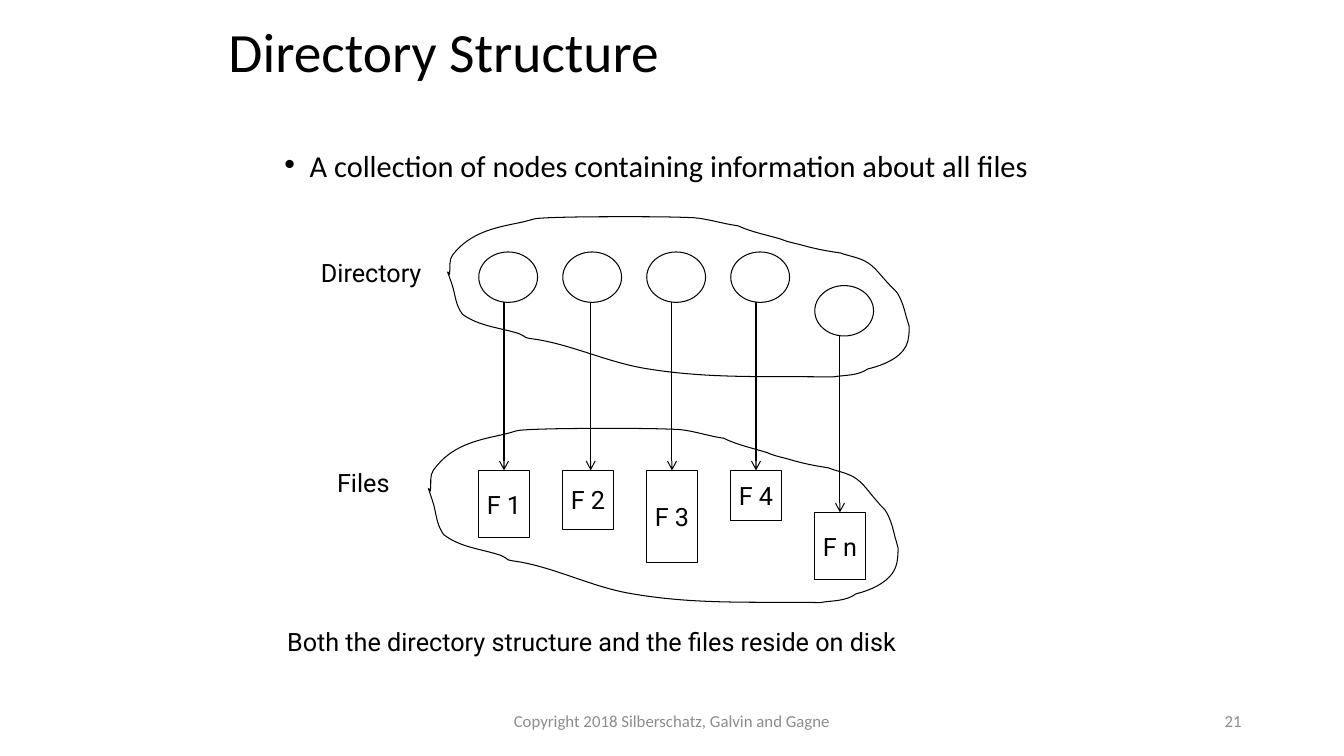
from lxml import etree
from pptx import Presentation
from pptx.dml.color import RGBColor
from pptx.enum.shapes import MSO_CONNECTOR, MSO_SHAPE
from pptx.enum.text import MSO_ANCHOR, MSO_AUTO_SIZE, PP_ALIGN
from pptx.oxml.ns import qn
from pptx.util import Inches, Pt

OVAL, RECTANGLE = MSO_SHAPE.OVAL, MSO_SHAPE.RECTANGLE
STRAIGHT = MSO_CONNECTOR.STRAIGHT
TOP, MIDDLE = MSO_ANCHOR.TOP, MSO_ANCHOR.MIDDLE
LEFT, CENTER, RIGHT = PP_ALIGN.LEFT, PP_ALIGN.CENTER, PP_ALIGN.RIGHT
NO_FIT = MSO_AUTO_SIZE.NONE

COLORS = {"ink": "000000", "paper": "FFFFFF", "footer": "8C8C8C"}
HEADING_FONT, LABEL_FONT = "Calibri", "Roboto"
COLUMNS, ROWS = 160, 90
CELL = Inches(1 / 12)
TOP_SIDE = 0

# Closed cloud outline in hundredths of an inch: a start point, then cubic curves.
CLOUD_WIDTH, CLOUD_HEIGHT = 458, 161
CLOUD_START = (2, 57)
CLOUD_CURVES = [
    (3, 50, 1, 43, 5, 38), (22, 16, 46, 11, 71, 6), (90, 2, 80, 2, 101, 1),
    (127, 0, 152, 0, 177, 0), (199, 0, 221, 0, 244, 1), (258, 2, 273, 7, 288, 9),
    (301, 15, 316, 18, 330, 22), (337, 25, 343, 26, 351, 28),
    (365, 32, 376, 34, 390, 36), (398, 39, 406, 40, 414, 44),
    (424, 49, 430, 59, 438, 67), (441, 71, 445, 73, 447, 77),
    (451, 84, 453, 91, 455, 99), (456, 102, 458, 109, 458, 109),
    (458, 113, 458, 122, 455, 128), (449, 141, 430, 148, 417, 151),
    (407, 158, 394, 157, 382, 159), (318, 158, 261, 161, 199, 151),
    (159, 145, 122, 126, 83, 121), (81, 121, 79, 120, 78, 120),
    (76, 119, 74, 117, 71, 116), (52, 110, 32, 109, 15, 97),
    (8, 88, 8, 79, 5, 69), (5, 69, 1, 57, 0, 55), (0, 54, 1, 56, 2, 57),
]

# Label, node row, file row, file height, arrow offset from the file's centre
FILES = [
    ("F 1", 30, 56, 8, 0),
    ("F 2", 30, 56, 7, 0.32),
    ("F 3", 30, 56, 11, 0),
    ("F 4", 30, 56, 6, 0),
    ("F n", 34, 61, 8, 0),
]
FIRST_COLUMN, COLUMN_STEP = 57, 10
NODE_WIDTH, NODE_HEIGHT, FILE_WIDTH = 7, 6, 6


def color(name):
    return RGBColor.from_string(COLORS[name])


def grid(*cells):
    return [round(cell * CELL) for cell in cells]


def bend(segment, curve):
    """Turn a straight path segment into a cubic curve."""
    segment.tag = qn("a:cubicBezTo")
    for point in list(segment):
        segment.remove(point)
    for x, y in zip(curve[::2], curve[1::2]):
        etree.SubElement(segment, qn("a:pt"), x=str(x), y=str(y))


def write(shape, text, font=LABEL_FONT, size=18, ink="ink", align=LEFT,
          anchor=TOP, wrap=True, spacing=None, bullet=None):
    frame = shape.text_frame
    frame.auto_size = NO_FIT
    frame.word_wrap = wrap
    frame.vertical_anchor = anchor
    para = frame.paragraphs[0]
    para.alignment = align
    para.space_before = Pt(0)
    if spacing:
        para.line_spacing = spacing
    if bullet:
        properties = para._p.get_or_add_pPr()
        properties.set("marL", str(Inches(0.25)))
        properties.set("indent", str(-Inches(0.25)))
        etree.SubElement(properties, qn("a:buChar")).set("char", bullet)
    span = para.add_run()
    span.text = text
    span.font.name = font
    span.font.size = Pt(size)
    span.font.color.rgb = color(ink)


class DiagramSlide:
    """Draws on one slide; places are columns and rows of 1/12 inch."""

    def __init__(self, deck, layout):
        self.page = deck.slides.add_slide(layout)
        self.shapes = self.page.shapes
        self.line_width = Pt(0.75)

    def outline(self, shape):
        shape.line.color.rgb = color("ink")
        shape.line.width = self.line_width

    def place(self, shape, cells):
        shape.left, shape.top, shape.width, shape.height = grid(*cells)

    def placeholder(self, index, cells, text, **style):
        box = self.page.placeholders[index]
        self.place(box, cells)
        write(box, text, font=HEADING_FONT, **style)

    def label(self, cells, text, **style):
        write(self.shapes.add_textbox(*grid(*cells)), text, **style)

    def shape(self, kind, cells):
        shape = self.shapes.add_shape(kind, *grid(*cells))
        shape.shadow.inherit = False
        shape.fill.solid()
        shape.fill.fore_color.rgb = color("paper")
        self.outline(shape)
        return shape

    def arrow(self, column, start_row, end_row, target=None):
        """Draw a downward arrow, joined to the target's top side if given."""
        arrow = self.shapes.add_connector(
            STRAIGHT, *grid(column, start_row, column, end_row))
        if target is not None:
            arrow.end_connect(target, TOP_SIDE)
        self.outline(arrow)
        head = etree.SubElement(arrow.line._get_or_add_ln(), qn("a:tailEnd"))
        head.set("type", "arrow")
        etree.SubElement(arrow._element.spPr, qn("a:effectLst"))

    def cloud(self, *cells):
        builder = self.shapes.build_freeform(*CLOUD_START)
        builder.add_line_segments([curve[4:] for curve in CLOUD_CURVES], close=True)
        cloud = builder.convert_to_shape()
        outline = next(cloud._element.iter(qn("a:path")))
        outline.set("w", str(CLOUD_WIDTH))
        outline.set("h", str(CLOUD_HEIGHT))
        for segment, curve in zip(outline.findall(qn("a:lnTo")), CLOUD_CURVES):
            bend(segment, curve)
        self.place(cloud, cells)
        cloud.shadow.inherit = False
        cloud.fill.background()
        self.outline(cloud)


def main():
    deck = Presentation()
    deck.slide_width, deck.slide_height = grid(COLUMNS, ROWS)
    slide = DiagramSlide(deck, deck.slide_layouts[1])

    slide.placeholder(0, (26, 2.75, 108, 7.5), "Directory Structure",
                      size=39.6, anchor=MIDDLE, spacing=0.9)
    slide.placeholder(1, (32.67, 18.08, 96.67, 4.67),
                      "A collection of nodes containing information about all files",
                      size=21.7, spacing=0.7, bullet="•")

    for index, (name, node_row, file_row, height, offset) in enumerate(FILES):
        column = FIRST_COLUMN + index * COLUMN_STEP
        slide.shape(OVAL, (column, node_row, NODE_WIDTH, NODE_HEIGHT))
        file_box = slide.shape(RECTANGLE, (column, file_row, FILE_WIDTH, height))
        write(file_box, name, align=CENTER, anchor=MIDDLE, wrap=False)
        slide.arrow(column + FILE_WIDTH / 2 + offset, node_row + NODE_HEIGHT,
                    file_row, None if offset else file_box)

    slide.cloud(53.28, 25.8, 54.96, 19.32)
    slide.cloud(51, 51, 55.92, 21)

    slide.label((37, 30, 14.4, 4.8), "Directory", align=CENTER, anchor=MIDDLE, wrap=False)
    slide.label((38.88, 55, 8.76, 4.8), "Files", align=CENTER, anchor=MIDDLE, wrap=False)
    slide.label((33, 74, 99.72, 5), "Both the directory structure and the files reside on disk")

    footer = {"font": HEADING_FONT, "size": 12, "ink": "footer", "anchor": MIDDLE}
    slide.label((53, 83.4, 54, 4.8), "Copyright 2018 Silberschatz, Galvin and Gagne",
                align=CENTER, **footer)
    slide.label((113, 83.4, 36, 4.8), "21", align=RIGHT, **footer)

    deck.save("out.pptx")


if __name__ == "__main__":
    main()
